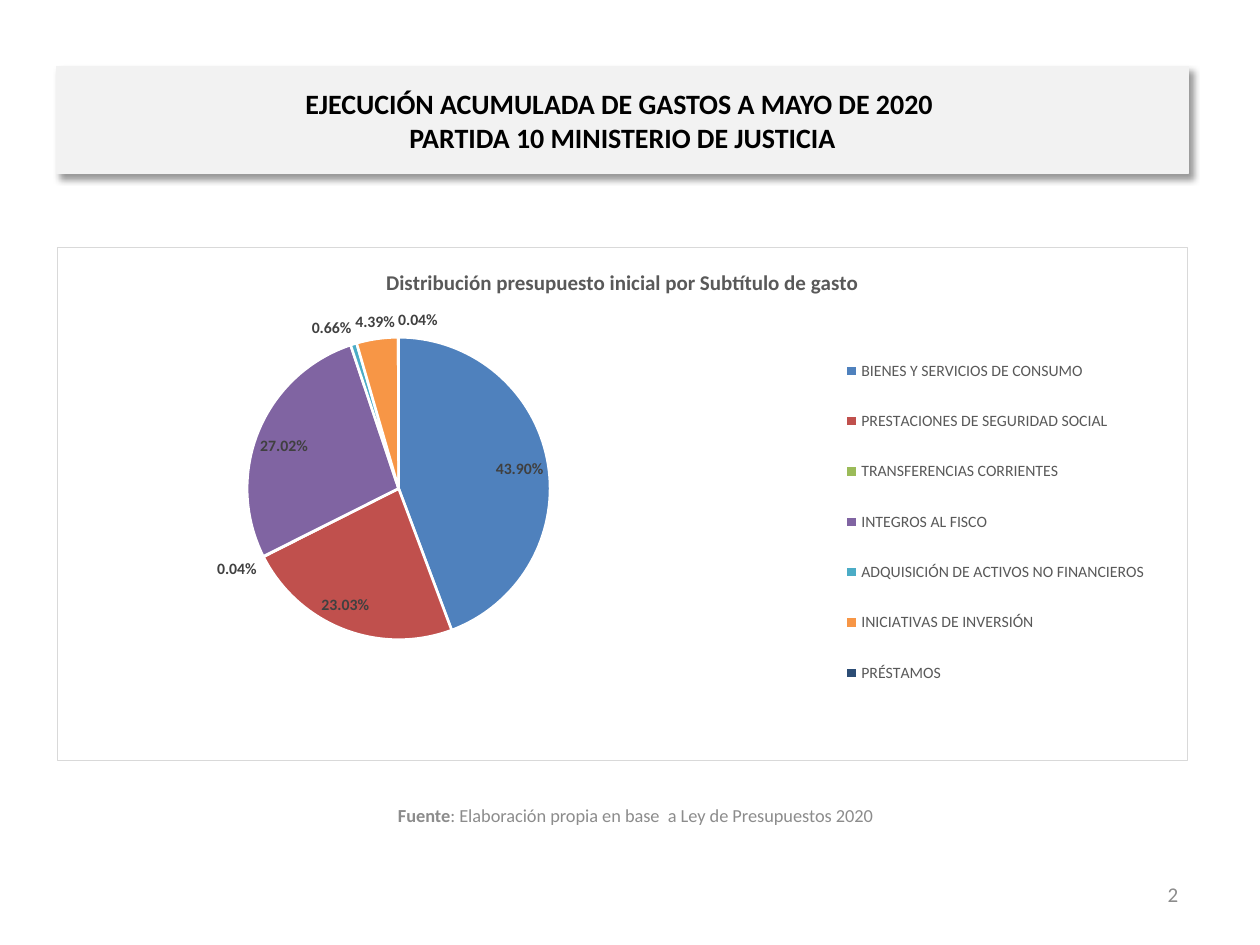
"""Build the budget slide: title band, spending pie chart, source note and page number."""
import lxml.etree
import pptx
import pptx.chart.data
import pptx.dml.color
import pptx.enum.chart
import pptx.enum.shapes
import pptx.enum.text
import pptx.oxml
import pptx.oxml.ns
import pptx.util

Inches = pptx.util.Inches
Pt = pptx.util.Pt
qn = pptx.oxml.ns.qn
ALIGN = pptx.enum.text.PP_ALIGN
COLORS = {"band": "F2F2F2", "title": "000000", "muted": "8C8C8C", "heading": "595959",
          "label": "404040", "paper": "FFFFFF", "border": "D9D9D9"}
SPENDING = [
    ("BIENES Y SERVICIOS DE CONSUMO", 0.4390, "4F81BD"),
    ("PRESTACIONES DE SEGURIDAD SOCIAL", 0.2303, "C0504D"),
    ("TRANSFERENCIAS CORRIENTES", 0.0004, "9BBB59"),
    ("INTEGROS AL FISCO", 0.2702, "8064A2"),
    ("ADQUISICIÓN DE ACTIVOS NO FINANCIEROS", 0.0066, "4BACC6"),
    ("INICIATIVAS DE INVERSIÓN", 0.0439, "F79646"),
    ("PRÉSTAMOS", 0.0004, "2C4D75"),
]
NAMESPACES = ('xmlns:c="http://schemas.openxmlformats.org/drawingml/2006/chart" '
              'xmlns:a="http://schemas.openxmlformats.org/drawingml/2006/main"')


def style_font(font, size, color, bold=False):
    font.name = "Calibri"
    font.size = Pt(size)
    font.bold = bold
    font.color.rgb = pptx.dml.color.RGBColor.from_string(COLORS[color])


def manual_layout(x, y, w, h, target=""):
    modes = "".join(f'<c:{axis}Mode val="edge"/>' for axis in "xy")
    sizes = "".join(f'<c:{key} val="{value}"/>' for key, value in zip("xywh", (x, y, w, h)))
    return pptx.oxml.parse_xml(
        f"<c:layout {NAMESPACES}><c:manualLayout>{target}{modes}{sizes}</c:manualLayout></c:layout>")


deck = pptx.Presentation()
deck.slide_width, deck.slide_height = Inches(10), Inches(7.5)
slide = deck.slides.add_slide(deck.slide_layouts[6])

band = slide.shapes.add_shape(pptx.enum.shapes.MSO_SHAPE.RECTANGLE,
                              Inches(0.45), Inches(0.53), Inches(8.98), Inches(0.85))
band.fill.solid()
band.fill.fore_color.rgb = pptx.dml.color.RGBColor.from_string(COLORS["band"])
band.line.color.rgb = pptx.dml.color.RGBColor.from_string(COLORS["band"])
band.line.width = Pt(0.75)
band.shadow.inherit = False
band_effects = band.element.spPr.find(qn("a:effectLst"))
band_effects.append(pptx.oxml.parse_xml(
    f'<a:outerShdw {NAMESPACES} blurRad="{Pt(4)}" dist="{Pt(3)}" dir="2700000" algn="tl" '
    'rotWithShape="0"><a:srgbClr val="000000"><a:alpha val="40000"/></a:srgbClr></a:outerShdw>'))
band.text_frame.vertical_anchor = pptx.enum.text.MSO_ANCHOR.MIDDLE
heading = band.text_frame.paragraphs[0]
heading.alignment = ALIGN.CENTER
for number, line in enumerate(["EJECUCIÓN ACUMULADA DE GASTOS A MAYO DE 2020 ",
                               "PARTIDA 10 MINISTERIO DE JUSTICIA"]):
    if number:
        heading.add_line_break()
    run = heading.add_run()
    run.text = line
    style_font(run.font, 16, "title", True)

notes = [
    (7.12, 6.9, 2.33, ALIGN.RIGHT, 12, [("2", False)]),
    (0.45, 6.27, 9.19, ALIGN.CENTER, 10.5,
     [("Fuente", True), (": Elaboración propia en base  a Ley de Presupuestos 2020", False)]),
]
for left, top, width, alignment, size, pieces in notes:
    note = slide.shapes.add_textbox(Inches(left), Inches(top), Inches(width), Inches(0.4)).text_frame
    note.word_wrap = True
    note.vertical_anchor = pptx.enum.text.MSO_ANCHOR.MIDDLE
    note.paragraphs[0].alignment = alignment
    for text, bold in pieces:
        run = note.paragraphs[0].add_run()
        run.text = text
        style_font(run.font, size, "muted", bold)

budget = pptx.chart.data.CategoryChartData(number_format="0.00%")
budget.categories = [name for name, share, color in SPENDING]
budget.add_series("Series 1", [share for name, share, color in SPENDING])
pie = slide.shapes.add_chart(pptx.enum.chart.XL_CHART_TYPE.PIE, Inches(0.45), Inches(1.96),
                             Inches(8.98), Inches(4.08), budget).chart
style_font(pie.font, 10, "title")
pie.has_title = True
title_run = pie.chart_title.text_frame.paragraphs[0].add_run()
title_run.text = "Distribución presupuesto inicial por Subtítulo de gasto"
style_font(title_run.font, 12, "heading", True)
pie.chart_title.include_in_layout = False
pie.has_legend = True
pie.legend.position = pptx.enum.chart.XL_LEGEND_POSITION.RIGHT
pie.legend.include_in_layout = False
style_font(pie.legend.font, 9, "heading")

plot = pie.plots[0]
plot.vary_by_categories = True
plot.has_data_labels = True
labels = plot.data_labels
labels.show_value = True
labels.show_percentage = False
labels.number_format = "0.00%"
labels.number_format_is_linked = False
labels.position = pptx.enum.chart.XL_LABEL_POSITION.BEST_FIT
style_font(labels.font, 9, "label", True)
for index, (name, share, color) in enumerate(SPENDING):
    slice_format = plot.series[0].points[index].format
    slice_format.fill.solid()
    slice_format.fill.fore_color.rgb = pptx.dml.color.RGBColor.from_string(color)
    slice_format.line.color.rgb = pptx.dml.color.RGBColor.from_string(COLORS["paper"])
    slice_format.line.width = Pt(1.5)

chart_space = pie.element
plot_area = chart_space.find(".//" + qn("c:plotArea"))
for automatic in plot_area.findall(qn("c:layout")):
    plot_area.remove(automatic)
plot_area.insert(0, manual_layout(0.062, 0.175, 0.48, 0.59, '<c:layoutTarget val="inner"/>'))
legend = chart_space.find(".//" + qn("c:legend"))
for automatic in legend.findall(qn("c:layout")):
    legend.remove(automatic)
legend.find(qn("c:legendPos")).addnext(manual_layout(0.68, 0.16, 0.3, 0.75))
chart_space.find(qn("c:chart")).addnext(pptx.oxml.parse_xml(
    f'<c:spPr {NAMESPACES}><a:solidFill><a:srgbClr val="{COLORS["paper"]}"/></a:solidFill>'
    f'<a:ln w="{Pt(0.75)}"><a:solidFill><a:srgbClr val="{COLORS["border"]}"/></a:solidFill>'
    '</a:ln></c:spPr>'))

deck.save("out.pptx")
